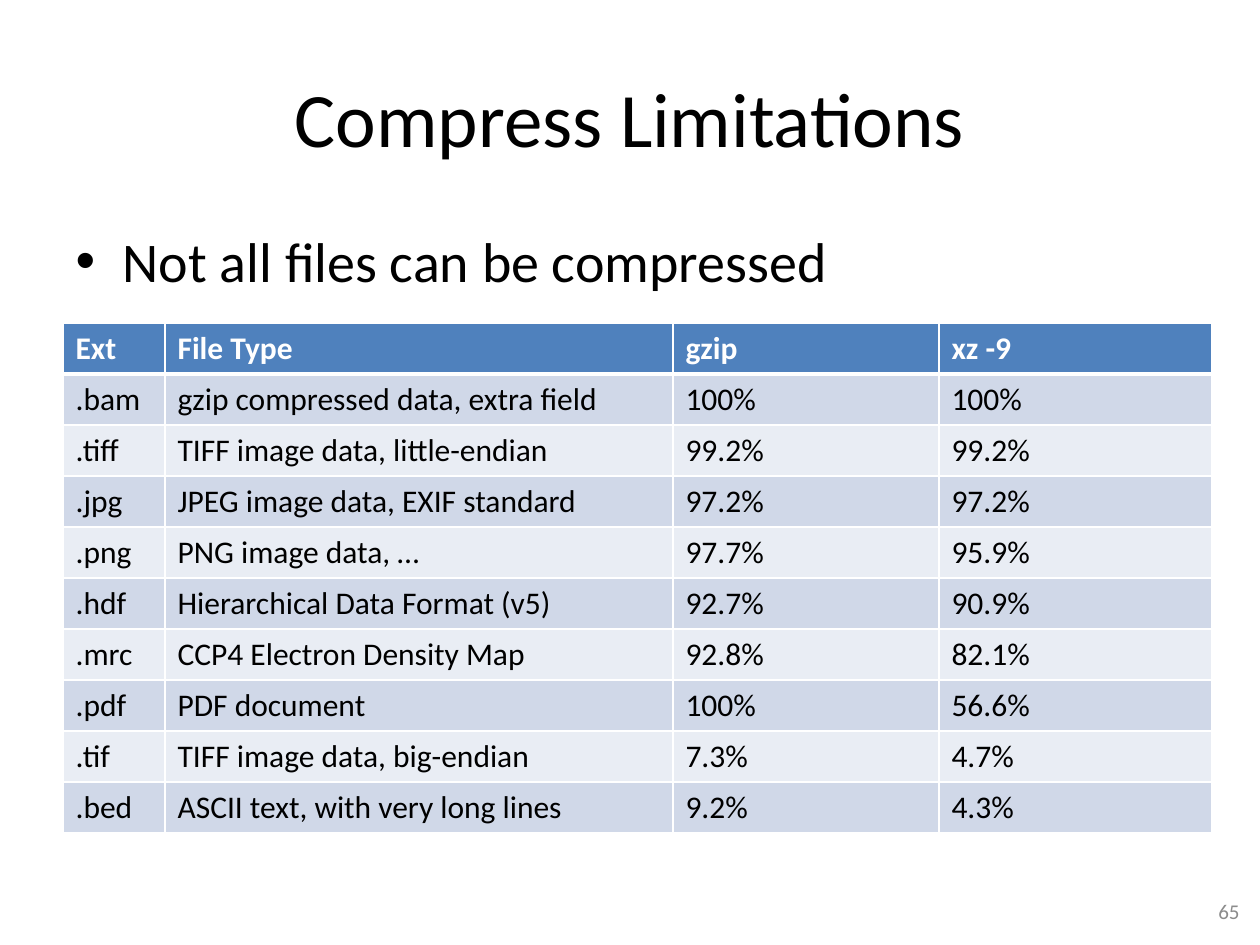
from lxml.etree import SubElement
from pptx import Presentation
from pptx.dml.color import RGBColor
from pptx.enum.text import MSO_ANCHOR, PP_ALIGN
from pptx.oxml.ns import qn
from pptx.util import Pt

EMU_PER_PX = 914400 / 126
FONT = "Calibri"
COLORS = {
    "text": "000000",
    "number": "8C8C8C",
    "white": "FFFFFF",
    "header": "4F81BD",
    "odd_row": "D0D8E8",
    "even_row": "E9EDF4",
}
COLUMN_WIDTHS = [102, 508, 266, 273]
ROWS = [
    ("Ext", "File Type", "gzip", "xz -9"),
    (".bam", "gzip compressed data, extra field", "100%", "100%"),
    (".tiff", "TIFF image data, little-endian", "99.2%", "99.2%"),
    (".jpg", "JPEG image data, EXIF standard", "97.2%", "97.2%"),
    (".png", "PNG image data, …", "97.7%", "95.9%"),
    (".hdf", "Hierarchical Data Format (v5)", "92.7%", "90.9%"),
    (".mrc", "CCP4 Electron Density Map", "92.8%", "82.1%"),
    (".pdf", "PDF document", "100%", "56.6%"),
    (".tif", "TIFF image data, big-endian", "7.3%", "4.7%"),
    (".bed", "ASCII text, with very long lines", "9.2%", "4.3%"),
]


def px(length):
    """Turn a length in px into EMU."""
    return round(length * EMU_PER_PX)


def color(name):
    """Return the named colour."""
    return RGBColor.from_string(COLORS[name])


def write_text(text_frame, text, size, fill="text", bold=False, align=None, anchor=None):
    """Write one formatted paragraph into a text frame."""
    text_frame.word_wrap = True
    if anchor is not None:
        text_frame.vertical_anchor = anchor
    paragraph = text_frame.paragraphs[0]
    if align is not None:
        paragraph.alignment = align
    run = paragraph.add_run()
    run.text = text
    run.font.name = FONT
    run.font.size = Pt(size)
    run.font.bold = bold
    run.font.color.rgb = color(fill)


def place(shape, box):
    """Move and size a shape to a box in px."""
    shape.left, shape.top, shape.width, shape.height = map(px, box)


def add_title(slide, box, text):
    """Fill the title placeholder."""
    place(slide.shapes.title, box)
    write_text(slide.shapes.title.text_frame, text, size=44,
               align=PP_ALIGN.CENTER, anchor=MSO_ANCHOR.MIDDLE)


def add_body(slide, box, text):
    """Fill the bulleted body placeholder."""
    body = slide.placeholders[1]
    place(body, box)
    write_text(body.text_frame, text, size=32)


def add_slide_number(slide, box, text):
    """Add the slide number at the lower right."""
    number = slide.shapes.add_textbox(*map(px, box))
    write_text(number.text_frame, text, size=12, fill="number",
               align=PP_ALIGN.RIGHT, anchor=MSO_ANCHOR.MIDDLE)


def set_borders(cell, widths):
    """Draw white cell borders with the given widths in points."""
    properties = cell._tc.get_or_add_tcPr()
    for side, width in widths.items():
        line = SubElement(properties, qn(f"a:ln{side}"), w=str(Pt(width)))
        fill = SubElement(line, qn("a:solidFill"))
        SubElement(fill, qn("a:srgbClr"), val=COLORS["white"])


def add_ratio_table(slide, box, rows, column_widths):
    """Add the table of compression ratios with a header and banded rows."""
    frame = slide.shapes.add_table(len(rows), len(column_widths), *map(px, box))
    table = frame.table
    for column, width in zip(table.columns, column_widths):
        column.width = px(width)
    for row_index, values in enumerate(rows):
        is_header = row_index == 0
        band = "header" if is_header else "odd_row" if row_index % 2 else "even_row"
        for column_index, value in enumerate(values):
            cell = table.cell(row_index, column_index)
            set_borders(cell, {"L": 1, "R": 1, "T": 3 if row_index == 1 else 1,
                               "B": 3 if is_header else 1})
            cell.fill.solid()
            cell.fill.fore_color.rgb = color(band)
            write_text(cell.text_frame, value, size=18, bold=is_header,
                       fill="white" if is_header else "text")


def main():
    """Build and save the slide."""
    presentation = Presentation()
    presentation.slide_width, presentation.slide_height = px(1260), px(945)
    slide = presentation.slides.add_slide(presentation.slide_layouts[1])
    add_title(slide, (63, 38, 1134, 157), "Compress Limitations")
    add_body(slide, (63, 220, 1134, 624), "Not all files can be compressed")
    add_slide_number(slide, (958, 886, 294, 50), "65")
    add_ratio_table(slide, (63, 323, sum(COLUMN_WIDTHS), 51 * len(ROWS)),
                    ROWS, COLUMN_WIDTHS)
    presentation.save("out.pptx")


if __name__ == "__main__":
    main()
